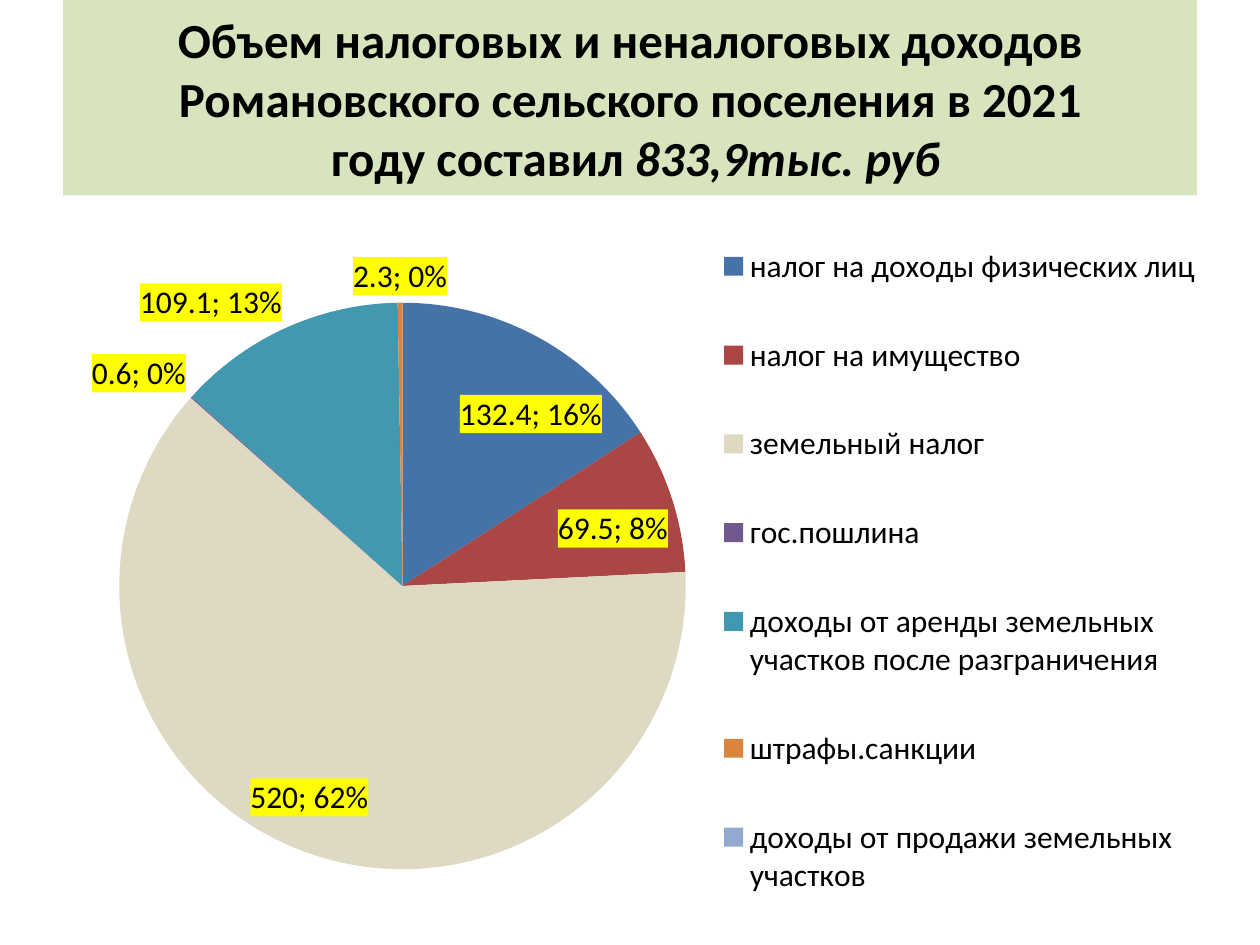
import pptx
import pptx.chart.data
import pptx.dml.color
import pptx.enum.chart
import pptx.enum.shapes
import pptx.enum.text
import pptx.oxml
import pptx.oxml.ns
import pptx.util

Pt = pptx.util.Pt
RGBColor = pptx.dml.color.RGBColor
BLACK = RGBColor(0x00, 0x00, 0x00)
GREEN = RGBColor(0xD7, 0xE4, 0xBD)
YELLOW = RGBColor(0xFF, 0xFF, 0x00)
BLUE = RGBColor(0x45, 0x72, 0xA7)
RED = RGBColor(0xAA, 0x46, 0x43)
BEIGE = RGBColor(0xDD, 0xD9, 0xC3)
PURPLE = RGBColor(0x71, 0x58, 0x8F)
TEAL = RGBColor(0x41, 0x98, 0xAF)
ORANGE = RGBColor(0xDB, 0x84, 0x3D)
LIGHT_BLUE = RGBColor(0x93, 0xA9, 0xCF)

INCOME = [
    ("налог на доходы физических лиц", 132.4, BLUE),
    ("налог на имущество", 69.5, RED),
    ("земельный налог", 520, BEIGE),
    ("гос.пошлина", 0.6, PURPLE),
    ("доходы от аренды земельных участков после разграничения", 109.1, TEAL),
    ("штрафы.санкции", 2.3, ORANGE),
    ("доходы от продажи земельных участков", 0, LIGHT_BLUE),
]


def add_text(p, text, font="Calibri", size=28, color=BLACK, bold=False, italic=False):
    r = p.add_run()
    r.text = text
    r.font.name = font
    r.font.size = Pt(size)
    r.font.color.rgb = color
    r.font.bold = bold
    r.font.italic = italic
    return r


def chart_xml(body):
    return pptx.oxml.parse_xml(body.replace(">", f" {pptx.oxml.ns.nsdecls('c', 'a')}>", 1))


def manual_layout(x, y, w, h, inner=False):
    target = '<c:layoutTarget val="inner"/>' if inner else ""
    return chart_xml(
        f'<c:layout><c:manualLayout>{target}<c:xMode val="edge"/><c:yMode val="edge"/>'
        f'<c:x val="{x}"/><c:y val="{y}"/><c:w val="{w}"/><c:h val="{h}"/>'
        "</c:manualLayout></c:layout>"
    )


class Deck:
    font = "Calibri"

    def __init__(self, width, height):
        self.prs = pptx.Presentation()
        self.prs.slide_width, self.prs.slide_height = Pt(width), Pt(height)
        self.s = self.prs.slides.add_slide(self.prs.slide_layouts[6])

    def banner(self, x, y, w, h, lines):
        sp = self.s.shapes.add_shape(
            pptx.enum.shapes.MSO_SHAPE.RECTANGLE, Pt(x), Pt(y), Pt(w), Pt(h))
        sp.shadow.inherit = False
        sp.fill.solid()
        sp.fill.fore_color.rgb = GREEN
        sp.line.fill.background()
        tf = sp.text_frame
        tf.word_wrap = True
        tf.vertical_anchor = pptx.enum.text.MSO_ANCHOR.MIDDLE
        p = tf.paragraphs[0]
        p.alignment = pptx.enum.text.PP_ALIGN.CENTER
        for i, line in enumerate(lines):
            if i:
                p.add_line_break()
            for text, italic in line:
                add_text(p, text, font=self.font, bold=True, italic=italic)

    def pie(self, x, y, w, h, rows, size=18):
        data = pptx.chart.data.CategoryChartData()
        data.categories = [name for name, _, _ in rows]
        data.add_series("Series 1", [value for _, value, _ in rows])
        chart = self.s.shapes.add_chart(
            pptx.enum.chart.XL_CHART_TYPE.PIE, Pt(x), Pt(y), Pt(w), Pt(h), data).chart
        chart.has_title = False
        chart.font.name = self.font
        chart.font.size = Pt(size)
        chart.font.color.rgb = BLACK
        plot = chart.plots[0]
        plot.vary_by_categories = True
        series = plot.series[0]
        for i, (_, _, color) in enumerate(rows):
            fill = series.points[i].format.fill
            fill.solid()
            fill.fore_color.rgb = color
        self.legend(chart)
        self.labels(series, rows, size)
        area = chart._chartSpace.chart.plotArea
        for old in area.findall(pptx.oxml.ns.qn("c:layout")):
            area.remove(old)
        area.insert(0, manual_layout(0.021, 0.142, 0.542, 0.757, inner=True))

    def legend(self, chart):
        chart.has_legend = True
        legend = chart.legend
        legend.position = pptx.enum.chart.XL_LEGEND_POSITION.RIGHT
        legend.include_in_layout = False
        el = legend._element
        for old in el.findall(pptx.oxml.ns.qn("c:layout")):
            el.remove(old)
        el.find(pptx.oxml.ns.qn("c:legendPos")).addnext(manual_layout(0.56, 0, 0.44, 1))

    def labels(self, series, rows, size):
        labels = series.data_labels
        labels.show_value = True
        labels.show_percentage = True
        labels.position = pptx.enum.chart.XL_LABEL_POSITION.BEST_FIT
        labels.font.name = self.font
        labels.font.size = Pt(size)
        labels.font.color.rgb = BLACK
        el = labels._element
        el.find(pptx.oxml.ns.qn("c:txPr")).addprevious(chart_xml(
            f'<c:spPr><a:solidFill><a:srgbClr val="{YELLOW}"/></a:solidFill></c:spPr>'))
        el.find(pptx.oxml.ns.qn("c:showBubbleSize")).addnext(
            chart_xml("<c:separator>; </c:separator>"))
        empty = [i for i, (_, value, _) in enumerate(rows) if not value]
        for n, i in enumerate(empty):
            el.insert(n, chart_xml(
                f'<c:dLbl><c:idx val="{i}"/><c:delete val="1"/></c:dLbl>'))


def main():
    deck = Deck(720, 540)
    deck.banner(36, 0, 648, 111.6, [
        [("Объем налоговых и неналоговых доходов Романовского сельского поселения в 2021", False)],
        [(" году составил ", False), ("833,9тыс. руб", True)],
    ])
    deck.pie(39.6, 112.3, 652.3, 427.7, INCOME)
    deck.prs.save("out.pptx")


if __name__ == "__main__":
    main()
